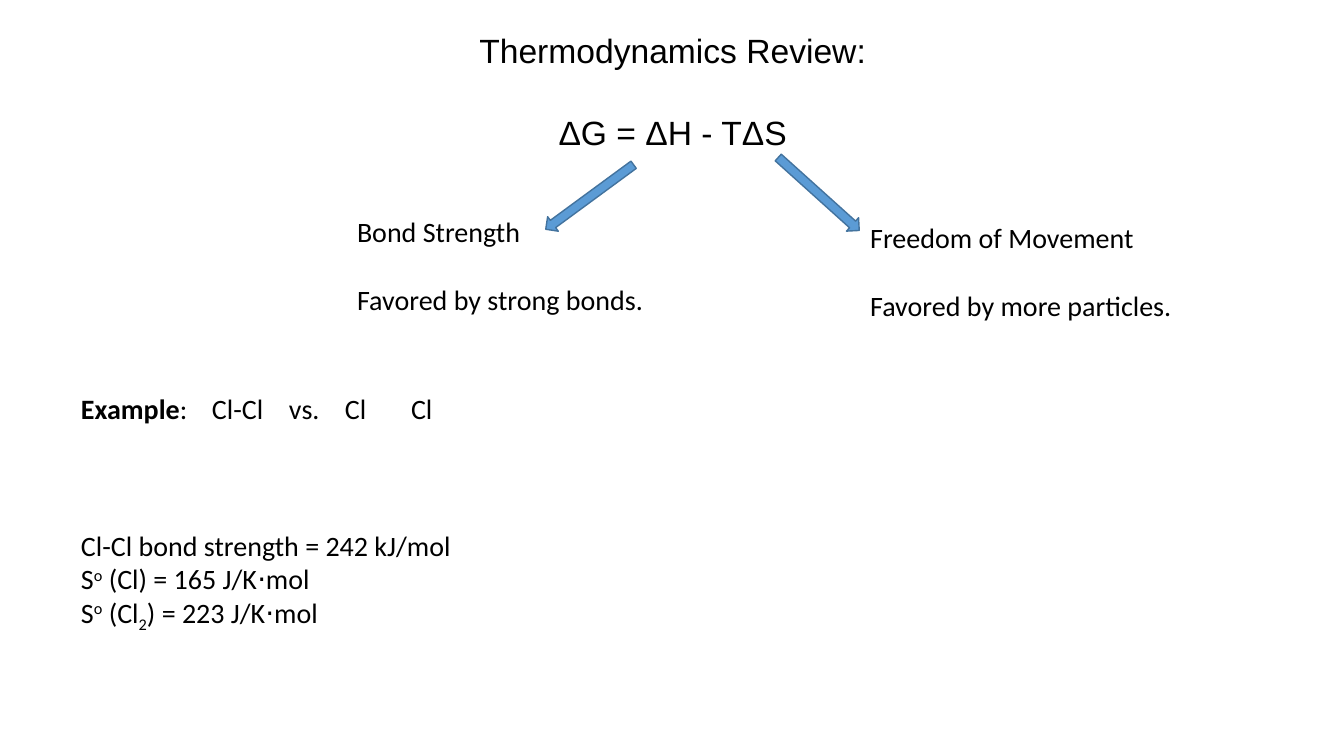
from lxml import etree
from pptx import Presentation
from pptx.dml.color import RGBColor
from pptx.enum.shapes import MSO_SHAPE
from pptx.enum.text import MSO_ANCHOR, MSO_AUTO_SIZE, PP_ALIGN
from pptx.oxml.ns import qn
from pptx.util import Inches, Pt

ARROW = MSO_SHAPE.RIGHT_ARROW
TOP = MSO_ANCHOR.TOP
FIXED = MSO_AUTO_SIZE.NONE
LEFT, CENTER = PP_ALIGN.LEFT, PP_ALIGN.CENTER
SCALE = 914400 / 100.8
COLORS = {"text": "000000", "arrow": "5B9BD5", "edge": "43739E"}
BASES = {"sup": "30000", "sub": "-25000"}
LINE = 24.4


def px(value):
    """Turn pixels into EMU."""
    return round(value * SCALE)


def color(name):
    """Look up a named colour."""
    return RGBColor.from_string(COLORS[name])


def place(shape, box):
    """Move and size a shape to a box in pixels."""
    shape.left, shape.top, shape.width, shape.height = map(px, box)


def add_run(para, text, style=None):
    """Add a run that may be bold, raised or lowered."""
    run = para.add_run()
    run.text = text
    if style == "bold":
        run.font.bold = True
    elif style:
        run._r.get_or_add_rPr().set("baseline", BASES[style])


def write(frame, rows, face="Calibri", size=20, align=LEFT):
    """Fill a text frame with rows of (space before, runs)."""
    frame.word_wrap = True
    frame.auto_size = FIXED
    frame.vertical_anchor = TOP
    for i, (gap, runs) in enumerate(rows):
        para = frame.add_paragraph() if i else frame.paragraphs[0]
        para.alignment = align
        para.space_before = Pt(gap)
        font = para.font
        font.name, font.size = face, Pt(size)
        font.color.rgb = color("text")
        for run in runs:
            add_run(para, *run)


def add_note(slide, box, rows):
    """Add a text box and return its frame."""
    note = slide.shapes.add_textbox(*map(px, box))
    write(note.text_frame, rows)
    return note.text_frame


def set_tabs(para, stops):
    """Set left tab stops, in pixels, on a paragraph."""
    props = para._p.get_or_add_pPr()
    tabs = etree.Element(qn("a:tabLst"))
    for stop in stops:
        etree.SubElement(tabs, qn("a:tab"), pos=str(px(stop)), algn="l")
    props.find(qn("a:spcBef")).addnext(tabs)


def add_arrow(slide, left, top, angle):
    """Add a turned block arrow."""
    arrow = slide.shapes.add_shape(ARROW, *map(px, (left, top, 109, 18)))
    arrow.rotation = angle
    arrow.shadow.inherit = False
    arrow.fill.solid()
    arrow.fill.fore_color.rgb = color("arrow")
    arrow.line.color.rgb = color("edge")
    arrow.line.width = Pt(1)


def main():
    """Build the thermodynamics slide."""
    deck = Presentation()
    deck.slide_width, deck.slide_height = Inches(13.33), Inches(7.5)
    slide = deck.slides.add_slide(deck.slide_layouts[5])

    title = slide.shapes.title
    place(title, (467, 25, 411, 132))
    write(title.text_frame,
          [(0, [("Thermodynamics Review:",)]), (30, [("ΔG = ΔH - TΔS",)])],
          "Arial", 24, CENTER)

    for left, top, head, rule in (
            (347, 210, "Bond Strength", "Favored by strong bonds."),
            (860, 216, "Freedom of Movement", "Favored by more particles.")):
        add_note(slide, (left, top, 325, 112),
                 [(0, [(head,)]), (LINE, [(rule,)])])

    add_arrow(slide, 535, 188, 143.7)
    add_arrow(slide, 764, 185, 42)

    degree = [("S",), ("o", "sup")]
    frame = add_note(slide, (71, 387, 393, 340), [
        (0, [("Example", "bold"), (":\tCl-Cl\tvs.\tCl\tCl",)]),
        (3 * LINE, [("Cl-Cl bond strength = 242 kJ/mol",)]),
        (0, degree + [(" (Cl) = 165 J/K⋅mol",)]),
        (0, degree + [(" (Cl",), ("2", "sub"), (") = 223 J/K⋅mol",)]),
    ])
    set_tabs(frame.paragraphs[0], (131, 208, 264, 330))
    deck.save("out.pptx")


if __name__ == "__main__":
    main()
